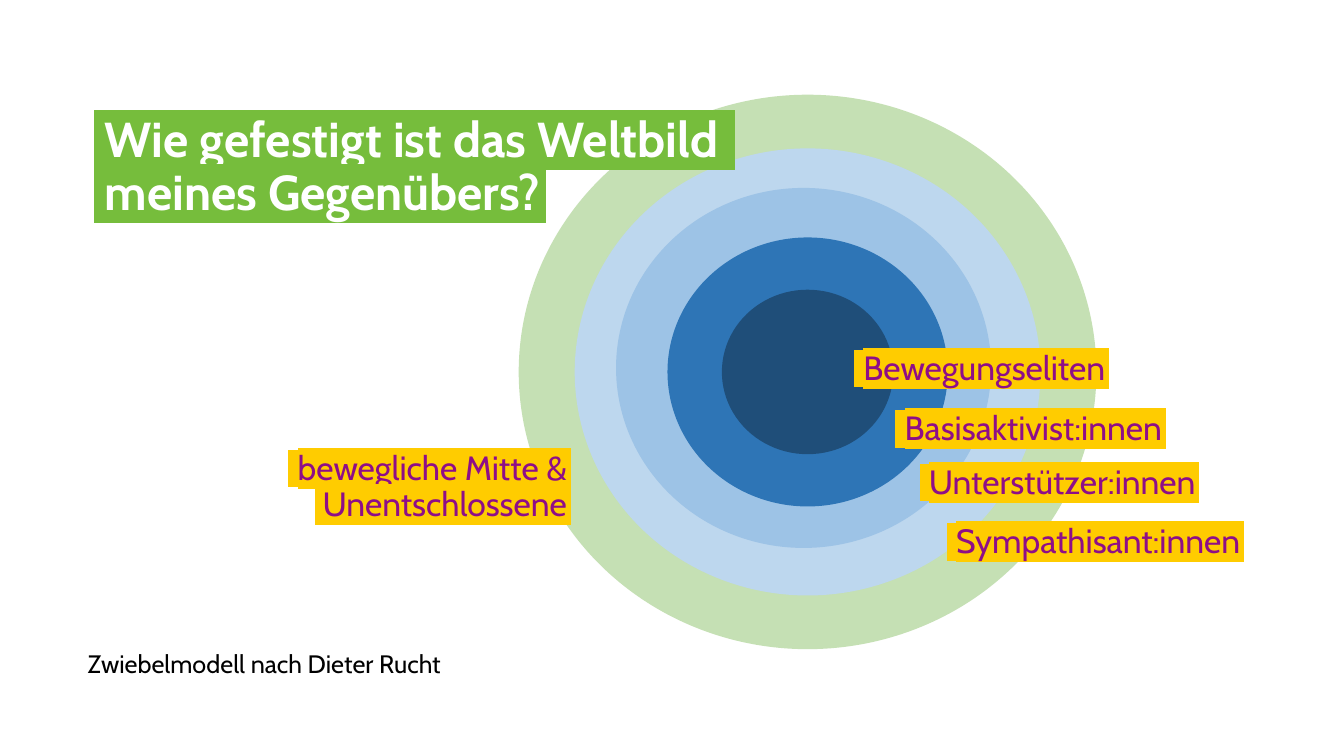
import pptx
import pptx.util
import pptx.dml.color
import pptx.enum.shapes
import pptx.enum.text
import pptx.oxml

Inches = pptx.util.Inches
Pt = pptx.util.Pt
RGB = pptx.dml.color.RGBColor
ALIGN = pptx.enum.text.PP_ALIGN
ANCHOR = pptx.enum.text.MSO_ANCHOR
OVAL = pptx.enum.shapes.MSO_SHAPE.OVAL

PLUM = RGB(0x8E, 0x0E, 0x88)
GOLD = RGB(0xFF, 0xCC, 0x00)
GREEN = RGB(0x76, 0xBD, 0x3C)
WHITE = RGB(0xFF, 0xFF, 0xFF)
BLACK = RGB(0, 0, 0)
PALE = RGB(0xC5, 0xE0, 0xB4)
ICE = RGB(0xBD, 0xD7, 0xEE)
SKY = RGB(0x9D, 0xC3, 0xE6)
BLUE = RGB(0x2E, 0x75, 0xB6)
NAVY = RGB(0x1F, 0x4E, 0x79)

TITLE = [" Wie gefestigt ist das Weltbild\u202f ", " meines Gegenübers?\u202f"]
NOTE = ["Zwiebelmodell nach Dieter Rucht"]
RINGS = [
    (5.73, 0, PALE, ["bewegliche Mitte &\u202f", " Unentschlossene\u202f"],
     (2.73, 4.42, 2.93, 0.77), ALIGN.RIGHT),
    (4.62, 0, ICE, ["Sympathisant:innen\u202f"], (9.39, 5.15, 3.18, 0.54), ALIGN.LEFT),
    (3.72, -0.04, SKY, ["Unterstützer:innen\u202f"], (9.12, 4.56, 2.88, 0.54), ALIGN.LEFT),
    (2.78, 0, BLUE, ["Basisaktivist:innen\u202f"], (8.88, 4.03, 2.88, 0.54), ALIGN.LEFT),
    (1.7, 0, NAVY, ["Bewegungseliten\u202f"], (8.47, 3.43, 2.63, 0.54), ALIGN.LEFT),
]
MID_X, MID_Y, RATIO = 8.01, 3.69, 0.96


def add_run(para, text, face, bold, mark):
    run = para.add_run()
    run.text = text
    if mark is not None:
        glow = pptx.oxml.parse_xml(
            '<a:highlight xmlns:a="http://schemas.openxmlformats.org/drawingml/2006/main">'
            f'<a:srgbClr val="{mark}"/></a:highlight>')
        run.font._element.append(glow)
    run.font.name = face
    run.font.bold = bold


def write(frame, lines, size, ink, mark, pitch, align, bold=False, lead=True):
    para = frame.paragraphs[0]
    para.alignment = align
    para.line_spacing = Pt(pitch)
    para.space_before = Pt(0)
    para.font.size = Pt(size)
    para.font.color.rgb = ink
    if lead:
        add_run(para, " ", "Arial", True, mark)
    for row, line in enumerate(lines):
        if row:
            para.add_line_break()
        add_run(para, line, "Cabin", bold, mark)


def add_label(home, place, lines, size, ink, mark, align, anchor):
    box = home.add_textbox(*map(Inches, place))
    frame = box.text_frame
    frame.word_wrap = True
    frame.margin_left = frame.margin_right = 0
    frame.vertical_anchor = anchor
    write(frame, lines, size, ink, mark, 26, align)


def add_ring(home, width, shift, fill):
    high = width * RATIO
    ring = home.add_shape(
        OVAL, Inches(MID_X + shift - width / 2), Inches(MID_Y + shift - high / 2),
        Inches(width), Inches(high))
    ring.shadow.inherit = False
    ring.fill.solid()
    ring.fill.fore_color.rgb = fill
    ring.line.fill.background()


def add_title(slide):
    title = slide.shapes.title
    title.left, title.top, title.width, title.height = map(
        Inches, (0.93, 0.93, 11.02, 1.26))
    frame = title.text_frame
    frame.word_wrap = True
    frame.auto_size = pptx.enum.text.MSO_AUTO_SIZE.NONE
    frame.vertical_anchor = ANCHOR.BOTTOM
    frame.margin_left = frame.margin_top = frame.margin_bottom = 0
    frame.margin_right = Inches(0.1)
    write(frame, TITLE, 35, WHITE, GREEN, 38, ALIGN.LEFT, bold=True, lead=False)
    slide.shapes._spTree.append(title._element)


def main():
    deck = pptx.Presentation()
    deck.slide_width, deck.slide_height = Inches(13.33), Inches(7.5)
    slide = deck.slides.add_slide(deck.slide_layouts[5])
    for width, shift, fill, lines, place, align in RINGS:
        group = slide.shapes.add_group_shape().shapes
        add_ring(group, width, shift, fill)
        add_label(group, place, lines, 24, PLUM, GOLD, align, ANCHOR.TOP)
    add_label(slide.shapes, (0.8, 6.28, 3.7, 0.54), NOTE, 18, BLACK, None,
              ALIGN.LEFT, ANCHOR.MIDDLE)
    add_title(slide)
    deck.save("out.pptx")


if __name__ == "__main__":
    main()
